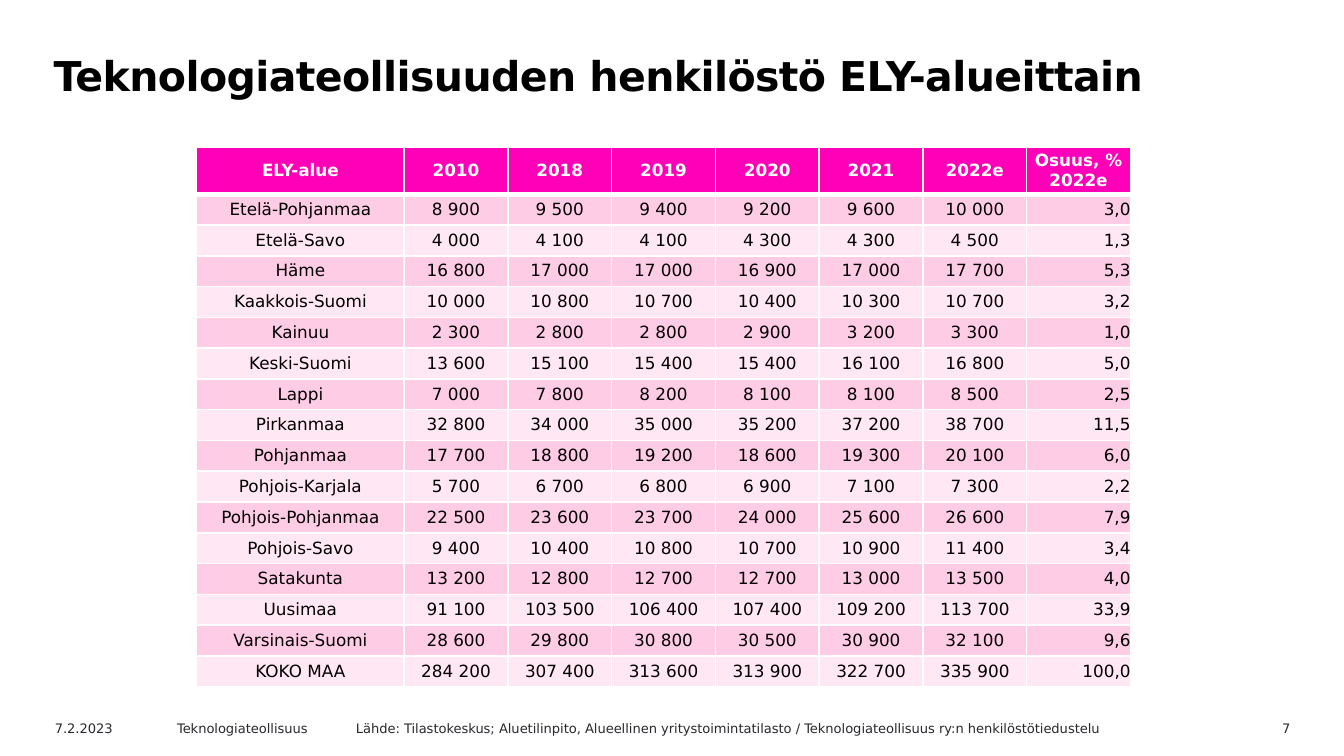
from pptx import Presentation
from pptx.dml.color import RGBColor as RGB
from pptx.enum.text import MSO_ANCHOR as Anchor, PP_ALIGN as Align
from pptx.oxml.ns import qn
from pptx.util import Pt
from lxml.etree import SubElement as Sub

FONT = "DejaVu Sans"
BLACK = RGB(0x00, 0x00, 0x00)
WHITE = RGB(0xFF, 0xFF, 0xFF)
GREY = RGB(0x29, 0x28, 0x2E)
PINK = RGB(0xFF, 0x00, 0xB8)
BANDS = RGB(0xFF, 0xE7, 0xF3), RGB(0xFF, 0xCC, 0xE6)

LINES = [
    "ELY-alue|2010|2018|2019|2020|2021|2022e|Osuus, %\n2022e",
    "Etelä-Pohjanmaa|8 900|9 500|9 400|9 200|9 600|10 000|3,0",
    "Etelä-Savo|4 000|4 100|4 100|4 300|4 300|4 500|1,3",
    "Häme|16 800|17 000|17 000|16 900|17 000|17 700|5,3",
    "Kaakkois-Suomi|10 000|10 800|10 700|10 400|10 300|10 700|3,2",
    "Kainuu|2 300|2 800|2 800|2 900|3 200|3 300|1,0",
    "Keski-Suomi|13 600|15 100|15 400|15 400|16 100|16 800|5,0",
    "Lappi|7 000|7 800|8 200|8 100|8 100|8 500|2,5",
    "Pirkanmaa|32 800|34 000|35 000|35 200|37 200|38 700|11,5",
    "Pohjanmaa|17 700|18 800|19 200|18 600|19 300|20 100|6,0",
    "Pohjois-Karjala|5 700|6 700|6 800|6 900|7 100|7 300|2,2",
    "Pohjois-Pohjanmaa|22 500|23 600|23 700|24 000|25 600|26 600|7,9",
    "Pohjois-Savo|9 400|10 400|10 800|10 700|10 900|11 400|3,4",
    "Satakunta|13 200|12 800|12 700|12 700|13 000|13 500|4,0",
    "Uusimaa|91 100|103 500|106 400|107 400|109 200|113 700|33,9",
    "Varsinais-Suomi|28 600|29 800|30 800|30 500|30 900|32 100|9,6",
    "KOKO MAA|284 200|307 400|313 600|313 900|322 700|335 900|100,0",
]
ROWS = [line.split("|") for line in LINES]


def write(frame, text, size=7, color=GREY, bold=False, align=Align.LEFT,
          track=None, lead=None):
    """Fill a text frame; track is letter spacing and lead is line height."""
    frame.word_wrap = True
    para = frame.paragraphs[0]
    para.text = text
    para.alignment = align
    if lead:
        para.line_spacing = Pt(lead)
    for run in para.runs:
        font = run.font
        font.name, font.size, font.bold = FONT, Pt(size), bold
        font.color.rgb = color
        if track:
            run._r.get_or_add_rPr().set("spc", str(round(track * 100)))


def border(cell, top, bottom):
    """Draw white cell borders; call before the cell is filled."""
    props = cell._tc.get_or_add_tcPr()
    for side, width in zip("LRTB", (1, 1, top, bottom)):
        line = Sub(props, qn(f"a:ln{side}"), w=str(Pt(width)))
        fill = Sub(line, qn("a:solidFill"))
        Sub(fill, qn("a:srgbClr"), val=str(WHITE))


deck = Presentation()
deck.slide_width, deck.slide_height = Pt(720), Pt(405)
slide = deck.slides.add_slide(deck.slide_layouts[6])
shapes = slide.shapes

title = shapes.add_textbox(Pt(20.16), Pt(23), Pt(629), Pt(51))
write(title.text_frame, "Teknologiateollisuuden henkilöstö ELY-alueittain",
      size=22, color=BLACK, bold=True, track=-0.3, lead=27)
title.text_frame.margin_left = Pt(8.6)

for text, left, width, align in (
    ("7.2.2023", 22.3, 72, Align.LEFT),
    ("Teknologiateollisuus", 87.8, 102, Align.LEFT),
    ("Lähde: Tilastokeskus; Aluetilinpito, Alueellinen yritystoimintatilasto"
     " / Teknologiateollisuus ry:n henkilöstötiedustelu",
     183.6, 446.4, Align.LEFT),
    ("7", 630.7, 67.7, Align.RIGHT),
):
    box = shapes.add_textbox(Pt(left), Pt(382.3), Pt(width), Pt(13))
    write(box.text_frame, text, align=align)

COL, ROW, TOP = 55.6, 16.52, 25.2
COUNT = len(ROWS[0])
frame = shapes.add_table(len(ROWS), COUNT, Pt(105.3), Pt(78.8),
                         Pt((COUNT + 1) * COL),
                         Pt(TOP + (len(ROWS) - 1) * ROW))
table = frame.table
for c, col in enumerate(table.columns):
    col.width = Pt(COL if c else 2 * COL)
for r, values in enumerate(ROWS):
    head = r == 0
    table.rows[r].height = Pt(TOP if head else ROW)
    for c, text in enumerate(values):
        cell = table.cell(r, c)
        cell.margin_left = cell.margin_right = 0
        cell.margin_top = cell.margin_bottom = 0
        cell.vertical_anchor = Anchor.MIDDLE
        border(cell, top=3 if r == 1 else 1, bottom=3 if head else 1)
        cell.fill.solid()
        cell.fill.fore_color.rgb = PINK if head else BANDS[r % 2]
        share = c == COUNT - 1 and not head
        write(cell.text_frame, text, size=9, bold=head,
              color=WHITE if head else BLACK,
              align=Align.RIGHT if share else Align.CENTER)

deck.save("out.pptx")
